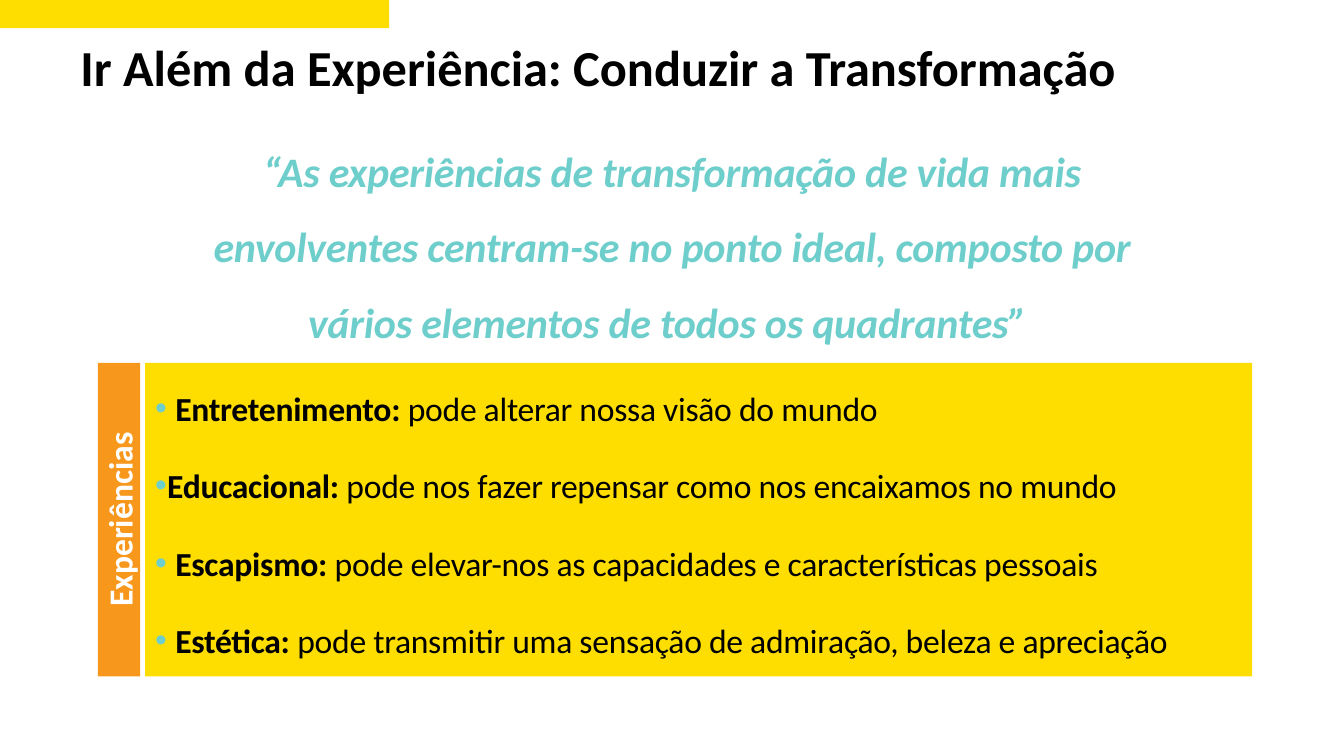
from pptx import Presentation
from pptx.dml.color import RGBColor
from pptx.enum.shapes import MSO_SHAPE
from pptx.enum.text import MSO_ANCHOR, PP_ALIGN
from pptx.oxml.ns import qn
from pptx.util import Inches, Pt
from lxml import etree

RECTANGLE = MSO_SHAPE.RECTANGLE
TOP, MIDDLE = MSO_ANCHOR.TOP, MSO_ANCHOR.MIDDLE
LEFT, CENTER = PP_ALIGN.LEFT, PP_ALIGN.CENTER

YELLOW = RGBColor(0xFD, 0xDE, 0x00)
ORANGE = RGBColor(0xF7, 0x98, 0x1D)
TEAL = RGBColor(0x6E, 0xCE, 0xCB)
BLACK = RGBColor(0x00, 0x00, 0x00)
WHITE = RGBColor(0xFF, 0xFF, 0xFF)

# Topic, explanation and hanging indent in inches
EXPERIENCES = [
    ("Entretenimento:", "pode alterar nossa visão do mundo", 0.2),
    ("Educacional:", "pode nos fazer repensar como nos encaixamos no mundo", 0.12),
    ("Escapismo:", "pode elevar-nos as capacidades e características pessoais", 0.2),
    ("Estética:", "pode transmitir uma sensação de admiração, beleza e apreciação", 0.2),
]


class SlideBuilder:
    """Places elements on a grid of 100 columns by 100 rows."""

    font_name = "Calibri"

    def __init__(self, deck):
        self.slide = deck.slides.add_slide(deck.slide_layouts[6])
        self.column = deck.slide_width / 100
        self.row = deck.slide_height / 100

    def area(self, left, top, width, height):
        return (round(left * self.column), round(top * self.row),
                round(width * self.column), round(height * self.row))

    def style(self, run, size, color, bold=True, italic=False, spacing=0):
        font = run.font
        font.name, font.size = self.font_name, Pt(size)
        font.bold, font.italic = bold, italic
        font.color.rgb = color
        if spacing:
            run._r.get_or_add_rPr().set("spc", str(round(spacing * 100)))

    def block(self, place, color):
        block = self.slide.shapes.add_shape(RECTANGLE, *self.area(*place))
        block.shadow.inherit = False
        block.fill.solid()
        block.fill.fore_color.rgb = color
        block.line.fill.background()
        return block

    def text(self, place, words, size, color, line_spacing, align=LEFT, **look):
        frame = self.slide.shapes.add_textbox(*self.area(*place)).text_frame
        frame.word_wrap = True
        frame.text = words
        paragraph = frame.paragraphs[0]
        paragraph.alignment = align
        paragraph.line_spacing = line_spacing
        self.style(paragraph.runs[0], size, color, **look)

    def side_label(self, place, words, fill, color):
        frame = self.block(place, fill).text_frame
        frame.text = words
        frame.vertical_anchor = MIDDLE
        frame._txBody.bodyPr.set("vert", "vert270")
        frame.paragraphs[0].alignment = CENTER
        self.style(frame.paragraphs[0].runs[0], 24, color)

    def bullet(self, paragraph, color, hang):
        properties = paragraph._p.get_or_add_pPr()
        properties.set("marL", str(Inches(hang)))
        properties.set("indent", str(-Inches(hang)))
        bullet_color = etree.SubElement(properties, qn("a:buClr"))
        etree.SubElement(bullet_color, qn("a:srgbClr")).set("val", str(color))
        etree.SubElement(properties, qn("a:buFont")).set("typeface", "Arial")
        etree.SubElement(properties, qn("a:buChar")).set("char", "•")

    def bullet_panel(self, place, items, fill, color, bullet_color):
        frame = self.block(place, fill).text_frame
        frame.word_wrap = True
        frame.vertical_anchor = TOP
        for index, (topic, explanation, hang) in enumerate(items):
            paragraph = frame.add_paragraph() if index else frame.paragraphs[0]
            self.bullet(paragraph, bullet_color, hang)
            paragraph.alignment = LEFT
            paragraph.line_spacing = 1.5
            paragraph.space_after = Pt(12)
            for words, bold in ((topic + " ", True), (explanation, False)):
                run = paragraph.add_run()
                run.text = words
                self.style(run, 24, color, bold=bold, spacing=-0.2)


def main():
    deck = Presentation()
    deck.slide_width, deck.slide_height = Inches(13.33), Inches(7.5)
    page = SlideBuilder(deck)

    # Corner band and title
    page.block((0, 0, 28.95, 3.73), YELLOW)
    page.text((5.25, 5.07, 91.9, 10.13),
              "Ir Além da Experiência: Conduzir a Transformação", 36, BLACK, 0.9)

    # Experiences panel with its side label
    panel_top, panel_height = 48, 41.47
    page.bullet_panel((10.8, panel_top, 82.37, panel_height),
                      EXPERIENCES, YELLOW, BLACK, TEAL)
    page.side_label((7.28, panel_top, 3.15, panel_height),
                    "Experiências", ORANGE, WHITE)

    # Quote
    page.text((15, 15.2, 70, 30.53),
              "“As experiências de transformação de vida mais envolventes "
              "centram-se no ponto ideal, composto por vários elementos de "
              "todos os quadrantes” ",
              30, TEAL, 1.5, CENTER, italic=True, spacing=-0.2)

    deck.save("out.pptx")


if __name__ == "__main__":
    main()
